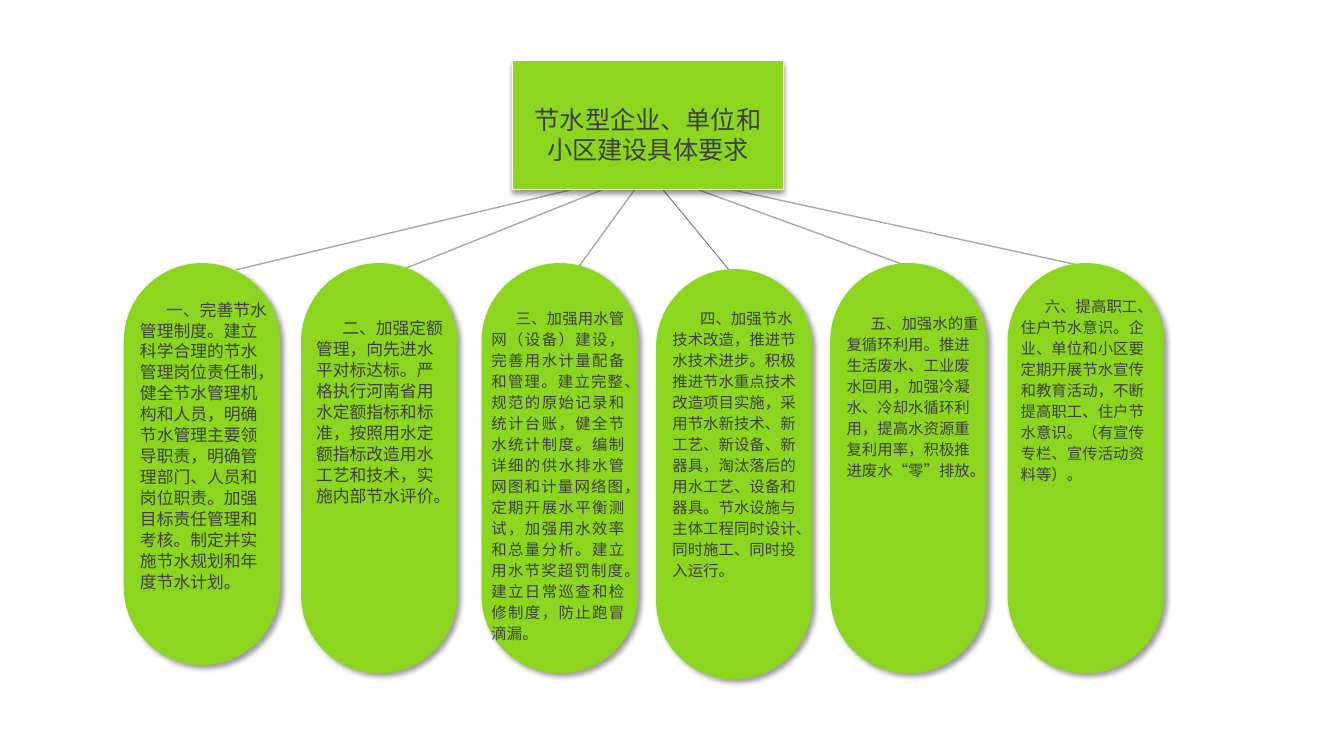
from collections import namedtuple
from lxml import etree
from pptx import Presentation
from pptx import util as u
from pptx.dml import color
from pptx.enum import shapes, text
from pptx.oxml import ns, parse_xml

FONT = "Noto Sans CJK SC"
GREEN, INK, WHITE = "8CD620", "3F3F3F", "FFFFFF"
GRAY, DARK_GRAY = "A6AAA9", "808080"
ALIGN = text.PP_ALIGN

Box = namedtuple("Box", "left top width height")
Requirement = namedtuple(
    "Requirement", "box line_end line_color line_width text_left text_top text_width indent size align wording")


def rgb(value):
    return color.RGBColor.from_string(value)


def place(shape, box):
    shape.left, shape.top, shape.width, shape.height = map(u.Cm, box)


def add_shadow(shape, degrees):
    shape.shadow.inherit = False
    effects = shape._element.spPr.find(ns.qn("a:effectLst"))
    effects.append(parse_xml(
        f'<a:outerShdw {ns.nsdecls("a")} blurRad="{u.Pt(4)}" dist="{u.Pt(3)}" '
        f'dir="{degrees * 60000}" rotWithShape="0"><a:srgbClr val="000000">'
        '<a:alpha val="40000"/></a:srgbClr></a:outerShdw>'))


def write_text(shape, wording, size, align, spacing, indent=0, anchor=text.MSO_ANCHOR.TOP, margins=(0, 0, 0, 0)):
    frame = shape.text_frame
    frame.word_wrap = True
    frame.auto_size = text.MSO_AUTO_SIZE.NONE
    frame.vertical_anchor = anchor
    frame.margin_left, frame.margin_top, frame.margin_right, frame.margin_bottom = map(u.Cm, margins)
    paragraph = frame.paragraphs[0]
    paragraph.alignment = align
    paragraph.line_spacing = u.Pt(spacing)
    paragraph.space_before = u.Pt(0)
    paragraph._p.get_or_add_pPr().set("indent", str(u.Cm(indent)))
    run = paragraph.add_run()
    run.text = wording
    run.font.size = u.Pt(size)
    run.font.name = FONT
    run.font.bold = False
    run.font.color.rgb = rgb(INK)
    etree.SubElement(run._r.get_or_add_rPr(), ns.qn("a:ea"), typeface=FONT)


def add_heading(slide, box, wording):
    title = slide.shapes.title
    place(title, box)
    properties = title._element.spPr
    properties.append(parse_xml(f'<a:prstGeom {ns.nsdecls("a")} prst="roundRect"><a:avLst/></a:prstGeom>'))
    title.fill.solid()
    title.fill.fore_color.rgb = rgb(GREEN)
    title.line.color.rgb = rgb(WHITE)
    title.line.width = u.Pt(0.75)
    add_shadow(title, 90)
    write_text(title, wording, 18, ALIGN.CENTER, 21.5,
               anchor=text.MSO_ANCHOR.MIDDLE, margins=(0.25, 0.6, 0.25, 0.1))
    slide.shapes._spTree.append(title._element)


def add_branch(slide, heading, requirement):
    box = requirement.box
    start = heading.left + heading.width / 2, heading.top + 2.8
    end = box.left + requirement.line_end, box.top + 0.17
    line = slide.shapes.add_connector(shapes.MSO_CONNECTOR.STRAIGHT, *map(u.Cm, start + end))
    line.line.color.rgb = rgb(requirement.line_color)
    line.line.width = u.Pt(requirement.line_width)
    etree.SubElement(line._element.spPr, ns.qn("a:effectLst"))


def add_requirement(slide, requirement):
    box = requirement.box
    capsule = slide.shapes.add_shape(shapes.MSO_SHAPE.ROUNDED_RECTANGLE, *map(u.Cm, box))
    capsule.adjustments[0] = 0.5
    capsule.fill.solid()
    capsule.fill.fore_color.rgb = rgb(GREEN)
    capsule.line.fill.background()
    add_shadow(capsule, 45)
    label = slide.shapes.add_textbox(
        u.Cm(box.left + requirement.text_left), u.Cm(box.top + requirement.text_top),
        u.Cm(requirement.text_width), u.Cm(box.height - requirement.text_top))
    write_text(label, requirement.wording, requirement.size, requirement.align, 15, requirement.indent)


REQUIREMENTS = [
    Requirement(Box(3.12, 6.63, 3.94, 10.13), 2.82, GRAY, 1, 0.41, 0.89, 3.35, 0.66, 12, ALIGN.LEFT,
                "一、完善节水管理制度。建立科学合理的节水管理岗位责任制，健全节水管理机构和人员，"
                "明确节水管理主要领导职责，明确管理部门、人员和岗位职责。加强目标责任管理和考核。"
                "制定并实施节水规划和年度节水计划。"),
    Requirement(Box(7.59, 6.63, 3.94, 10.34), 2.54, GRAY, 1, 0.38, 1.35, 3.35, 0.66, 12, ALIGN.LEFT,
                "二、加强定额管理，向先进水平对标达标。严格执行河南省用水定额指标和标准，"
                "按照用水定额指标改造用水工艺和技术，实施内部节水评价。"),
    Requirement(Box(12.14, 6.63, 3.94, 10.34), 2.39, GRAY, 1, 0.25, 1.09, 3.35, 0.61, 11, ALIGN.JUSTIFY,
                "三、加强用水管网（设备）建设，完善用水计量配备和管理。建立完整、规范的原始记录和统计台账，"
                "健全节水统计制度。编制详细的供水排水管网图和计量网络图，定期开展水平衡测试，"
                "加强用水效率和总量分析。建立用水节奖超罚制度。建立日常巡查和检修制度，防止跑冒滴漏。"),
    Requirement(Box(16.54, 6.78, 3.94, 10.34), 1.96, DARK_GRAY, 0.75, 0.41, 0.94, 3.4, 0.7, 11, ALIGN.LEFT,
                "四、加强节水技术改造，推进节水技术进步。积极推进节水重点技术改造项目实施，"
                "采用节水新技术、新工艺、新设备、新器具，淘汰落后的用水工艺、设备和器具。"
                "节水设施与主体工程同时设计、同时施工、同时投入运行。"),
    Requirement(Box(20.93, 6.63, 3.94, 10.34), 2.21, GRAY, 1, 0.41, 1.22, 3.4, 0.61, 11, ALIGN.LEFT,
                "五、加强水的重复循环利用。推进生活废水、工业废水回用，加强冷凝水、冷却水循环利用，"
                "提高水资源重复利用率，积极推进废水“零”排放。"),
    Requirement(Box(25.4, 6.63, 3.94, 10.34), 2.34, GRAY, 1, 0.33, 0.79, 3.4, 0.61, 11, ALIGN.LEFT,
                "六、提高职工、住户节水意识。企业、单位和小区要定期开展节水宣传和教育活动，"
                "不断提高职工、住户节水意识。（有宣传专栏、宣传活动资料等）。"),
]


def main():
    presentation = Presentation()
    presentation.slide_width, presentation.slide_height = u.Cm(33.88), u.Cm(19.05)
    slide = presentation.slides.add_slide(presentation.slide_layouts[5])
    heading = Box(12.93, 1.52, 6.81, 3.25)
    for requirement in REQUIREMENTS:
        add_branch(slide, heading, requirement)
    for requirement in REQUIREMENTS:
        add_requirement(slide, requirement)
    add_heading(slide, heading, "节水型企业、单位和小区建设具体要求")
    presentation.save("out.pptx")


if __name__ == "__main__":
    main()
